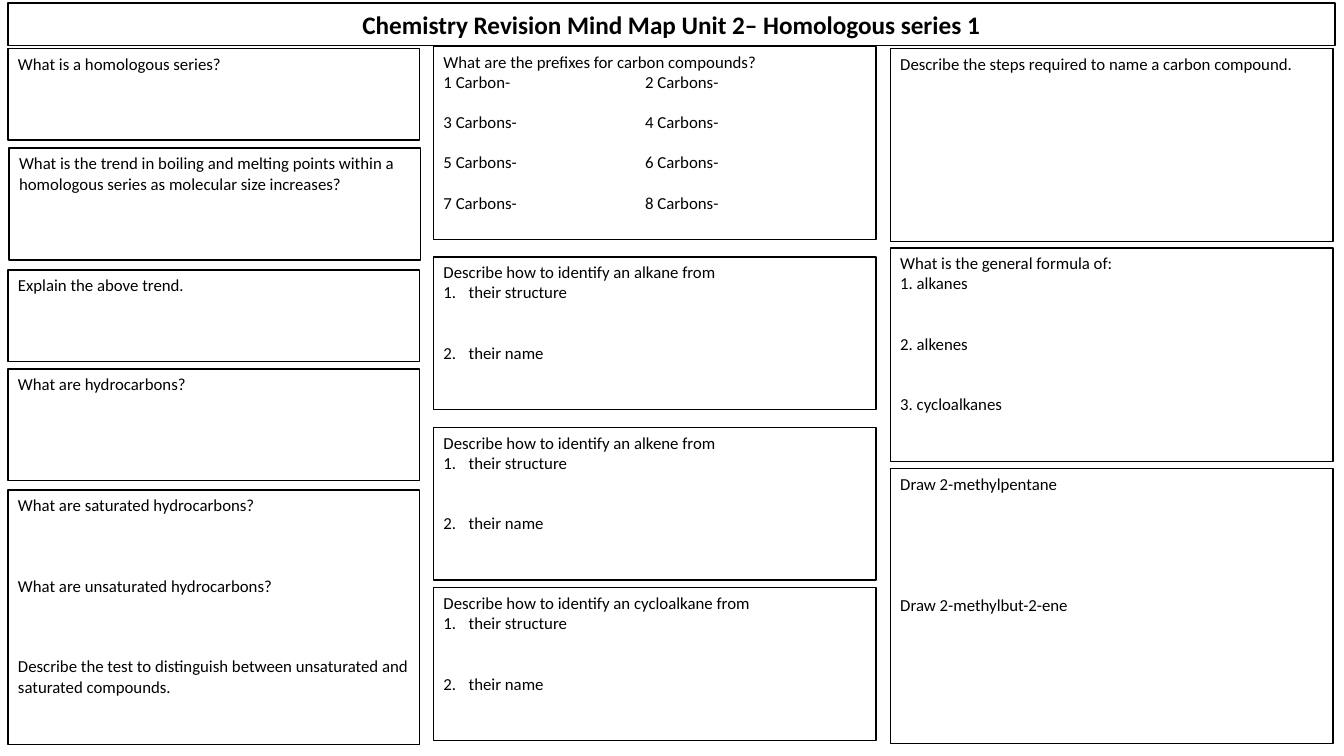
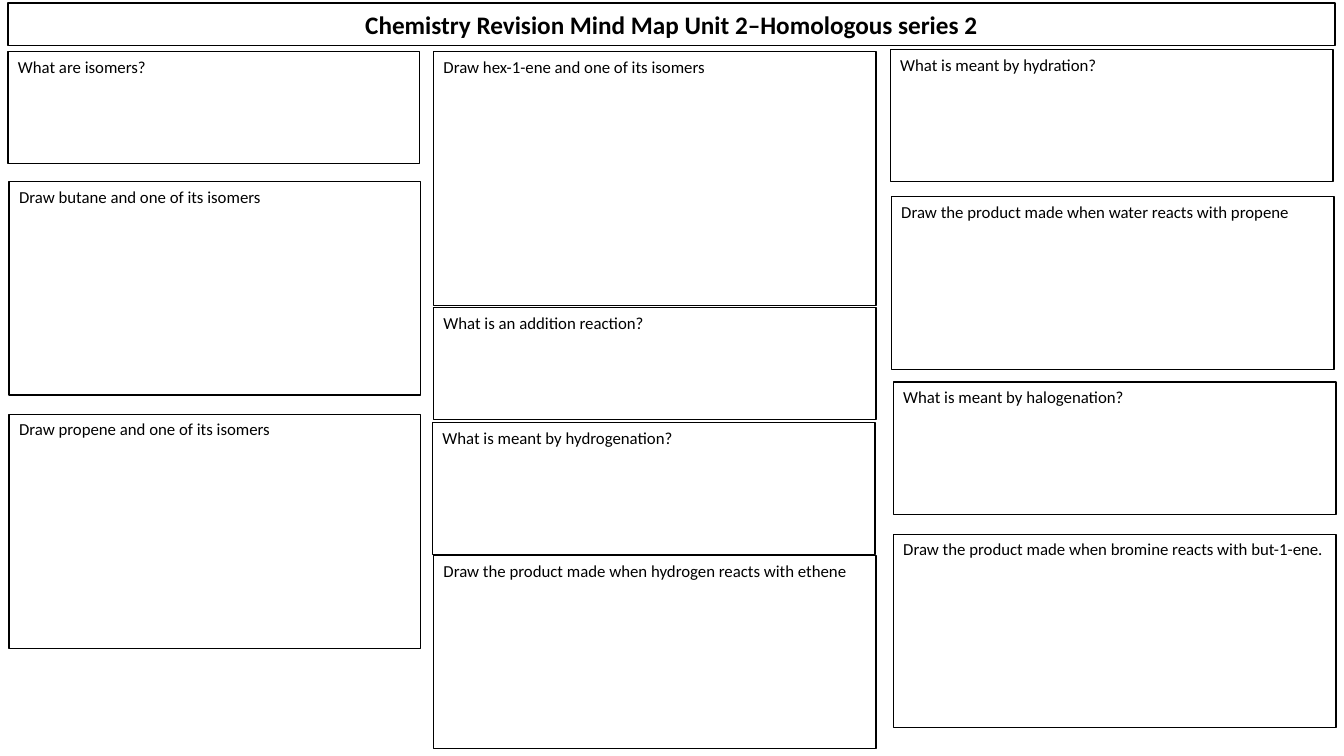
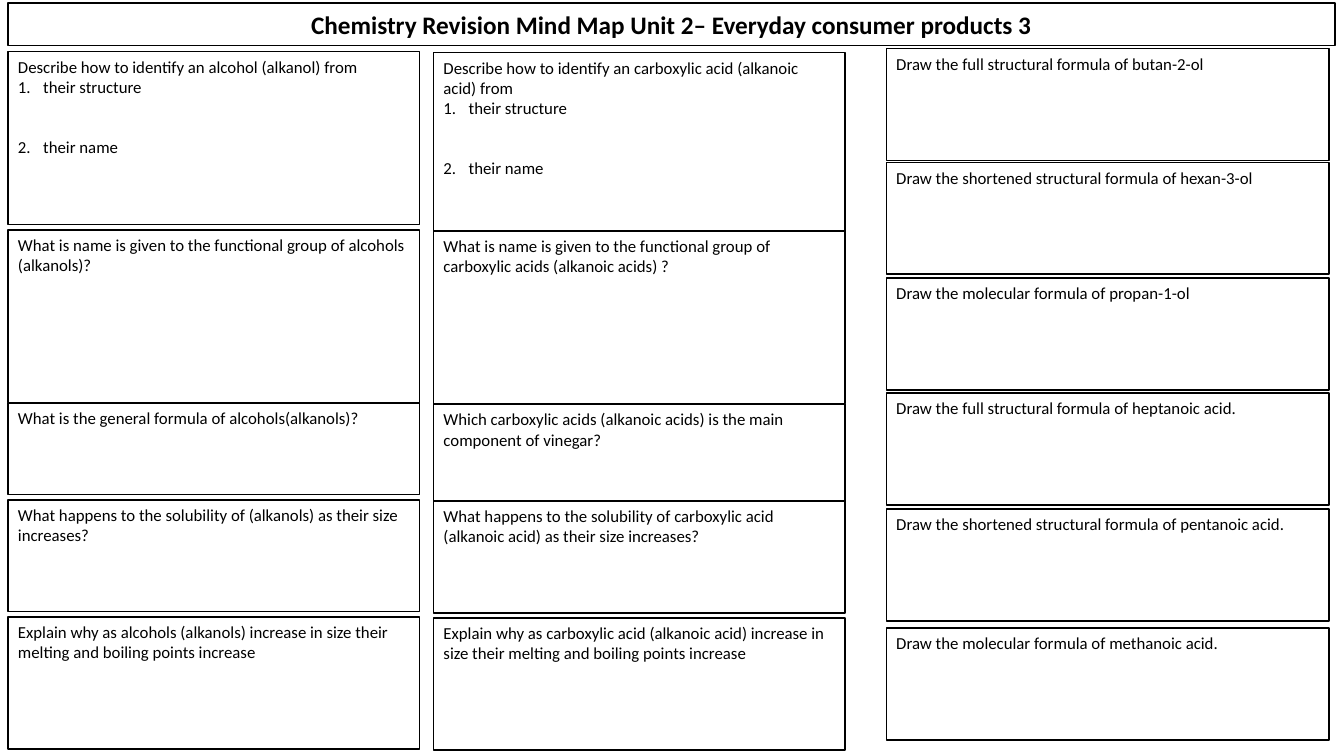
from dataclasses import dataclass

from lxml import etree
from pptx import Presentation
from pptx import util as u
from pptx.dml.color import RGBColor
from pptx.enum import shapes, text
from pptx.oxml import ns

BLACK = RGBColor(0x00, 0x00, 0x00)
WHITE = RGBColor(0xFF, 0xFF, 0xFF)
TITLE_FONT = {"name": "Calibri", "size": u.Pt(18), "bold": True}
BODY_FONT = {"name": "Calibri", "size": u.Pt(12), "bold": False}
FRAME = {"word_wrap": True, "auto_size": text.MSO_AUTO_SIZE.NONE}
TITLE_FRAME = FRAME | {"vertical_anchor": text.MSO_ANCHOR.MIDDLE}
BODY_FRAME = FRAME | {"vertical_anchor": text.MSO_ANCHOR.TOP}
NARROW, WIDE = 4.08, 4.39
LINE_POINTS = 14.4
LINE_INCHES = 0.202
PADDING = 0.1


@dataclass
class Line:
    text: str
    gap: int = 0
    numbered: bool = False


IDENTIFY = (Line("their structure", 0, True), Line("their name", 2, True))


def assign(target, values):
    for name, value in values.items():
        setattr(target, name, value)


def add_element(parent, tag, **attributes):
    return etree.SubElement(parent, ns.qn(tag), attributes)


class MindMap:
    def __init__(self):
        self.presentation = Presentation()
        assign(self.presentation, {"slide_width": u.Inches(13.33), "slide_height": u.Inches(7.5)})
        self.slide = None

    def add_slide(self, title):
        self.slide = self.presentation.slides.add_slide(self.presentation.slide_layouts[5])
        shape = self.slide.shapes.title
        assign(shape, {"left": u.Inches(0.08), "top": u.Inches(0.03),
                       "width": u.Inches(13.16), "height": u.Inches(0.42)})
        geometry = add_element(shape.element.spPr, "a:prstGeom", prst="roundRect")
        add_element(geometry, "a:avLst")
        self.outline(shape)
        assign(shape.text_frame, TITLE_FRAME)
        paragraph = shape.text_frame.paragraphs[0]
        paragraph.alignment = text.PP_ALIGN.CENTER
        self.add_words(paragraph, title, TITLE_FONT)

    def outline(self, shape):
        shape.fill.solid()
        shape.fill.fore_color.rgb = WHITE
        shape.line.color.rgb = BLACK
        shape.line.width = u.Pt(1)

    def add_words(self, paragraph, words, font):
        run = paragraph.add_run()
        run.text = words
        assign(run.font, font)
        run.font.color.rgb = BLACK

    def add_box(self, left, top, width, rows, lines):
        height = PADDING + rows * LINE_INCHES
        shape = self.slide.shapes.add_shape(
            shapes.MSO_SHAPE.RECTANGLE, *map(u.Inches, (left, top, width, height)))
        shape.shadow.inherit = False
        self.outline(shape)
        frame = shape.text_frame
        assign(frame, BODY_FRAME)
        for index, line in enumerate(lines):
            paragraph = frame.add_paragraph() if index else frame.paragraphs[0]
            self.add_line(paragraph, line if isinstance(line, Line) else Line(line))

    def add_line(self, paragraph, line):
        paragraph.alignment = text.PP_ALIGN.LEFT
        if line.gap:
            paragraph.space_before = u.Pt(line.gap * LINE_POINTS)
        properties = paragraph._p.get_or_add_pPr()
        if line.numbered:
            properties.set("marL", str(u.Inches(0.25)))
            properties.set("indent", str(-u.Inches(0.25)))
            add_element(properties, "a:buFont", typeface="+mj-lt")
            add_element(properties, "a:buAutoNum", type="arabicPeriod")
        if "\t" in line.text:
            tabs = add_element(properties, "a:tabLst")
            add_element(tabs, "a:tab", pos=str(u.Inches(2)), algn="l")
        self.add_words(paragraph, line.text, BODY_FONT)

    def add_column(self, width, boxes):
        for left, top, rows, *lines in boxes:
            self.add_box(left, top, width, rows, lines)


SLIDES = {
    "Chemistry Revision Mind Map Unit 2– Homologous series 1": [
        (NARROW, [
            (0.08, 0.48, 4, "What is a homologous series?"),
            (0.09, 1.47, 5, "What is the trend in boiling and melting points within a "
                            "homologous series as molecular size increases?"),
            (0.08, 2.68, 4, "Explain the above trend."),
            (0.08, 3.66, 5, "What are hydrocarbons?"),
            (0.08, 4.86, 12, "What are saturated hydrocarbons?",
             Line("What are unsaturated hydrocarbons?", 3),
             Line("Describe the test to distinguish between unsaturated and "
                  "saturated compounds.", 3)),
        ]),
        (WIDE, [
            (4.3, 0.46, 9, "What are the prefixes for carbon compounds?",
             "1 Carbon-\t2 Carbons-",
             *(Line(f"{n} Carbons-\t{n + 1} Carbons-", 1) for n in (3, 5, 7))),
            (4.3, 2.55, 7, "Describe how to identify an alkane from", *IDENTIFY),
            (4.3, 4.24, 7, "Describe how to identify an alkene from", *IDENTIFY),
            (4.3, 5.83, 7, "Describe how to identify an cycloalkane from", *IDENTIFY),
        ]),
        (WIDE, [
            (8.83, 0.48, 9, "Describe the steps required to name a carbon compound."),
            (8.83, 2.46, 10, "What is the general formula of:", "1. alkanes",
             Line("2. alkenes", 2), Line("3. cycloalkanes", 2)),
            (8.83, 4.65, 13, "Draw 2-methylpentane", Line("Draw 2-methylbut-2-ene", 5)),
        ]),
    ],
    "Chemistry Revision Mind Map Unit 2–Homologous series 2": [
        (NARROW, [
            (0.08, 0.51, 5, "What are isomers?"),
            (0.09, 1.8, 10, "Draw butane and one of its isomers"),
            (0.09, 4.11, 11, "Draw propene and one of its isomers"),
        ]),
        (WIDE, [
            (4.3, 0.51, 12, "Draw hex-1-ene and one of its isomers"),
            (4.3, 3.05, 5, "What is an addition reaction?"),
            (4.29, 4.19, 6, "What is meant by hydrogenation?"),
            (4.3, 5.51, 9, "Draw the product made when hydrogen reacts with ethene"),
        ]),
        (WIDE, [
            (8.83, 0.49, 6, "What is meant by hydration?"),
            (8.84, 1.95, 8, "Draw the product made when water reacts with propene"),
            (8.86, 3.79, 6, "What is meant by halogenation?"),
            (8.86, 5.3, 9, "Draw the product made when bromine reacts with but-1-ene."),
        ]),
    ],
    "Chemistry Revision Mind Map Unit 2– Everyday consumer products 3": [
        (NARROW, [
            (0.08, 0.51, 8, "Describe how to identify an alcohol (alkanol) from", *IDENTIFY),
            (0.08, 2.28, 8, "What is name is given to the functional group of alcohols "
                            "(alkanols)?"),
            (0.08, 4, 4, "What is the general formula of alcohols(alkanols)?"),
            (0.08, 4.96, 5, "What happens to the solubility of (alkanols) as their size "
                            "increases?"),
            (0.08, 6.12, 6, "Explain why as alcohols (alkanols) increase in size their "
                            "melting and boiling points increase"),
        ]),
        (NARROW, [
            (4.3, 0.52, 9, "Describe how to identify an carboxylic acid (alkanoic acid) from",
             *IDENTIFY),
            (4.3, 2.29, 8, "What is name is given to the functional group of carboxylic "
                           "acids (alkanoic acids) ?"),
            (4.3, 4.01, 6, "Which carboxylic acids (alkanoic acids) is the main component "
                           "of vinegar?"),
            (4.3, 4.97, 5, "What happens to the solubility of carboxylic acid (alkanoic "
                           "acid) as their size increases?"),
            (4.3, 6.13, 6, "Explain why as carboxylic acid (alkanoic acid) increase in "
                           "size their melting and boiling points increase"),
        ]),
        (WIDE, [
            (8.79, 0.48, 5, "Draw the full structural formula of butan-2-ol"),
            (8.79, 1.61, 5, "Draw the shortened structural formula of hexan-3-ol"),
            (8.79, 2.76, 5, "Draw the molecular formula of propan-1-ol"),
            (8.79, 3.9, 5, "Draw the full structural formula of heptanoic acid."),
            (8.79, 5.05, 5, "Draw the shortened structural formula of pentanoic acid."),
            (8.79, 6.23, 5, "Draw the molecular formula of methanoic acid."),
        ]),
    ],
}


def main():
    mind_map = MindMap()
    for title, columns in SLIDES.items():
        mind_map.add_slide(title)
        for width, boxes in columns:
            mind_map.add_column(width, boxes)
    mind_map.presentation.save("out.pptx")


if __name__ == "__main__":
    main()
